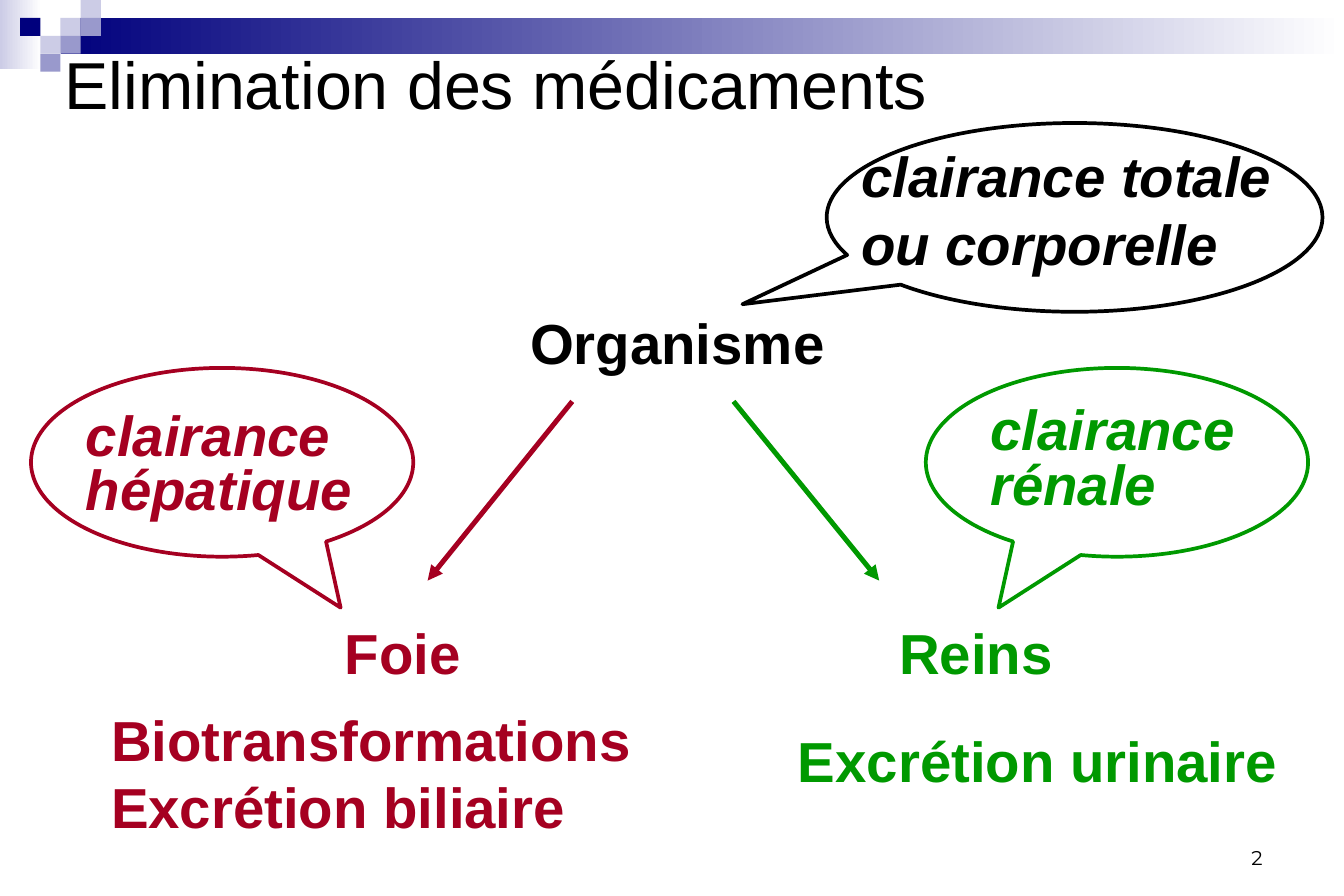
import pptx
import pptx.util
import pptx.dml.color
import pptx.enum.shapes
import pptx.enum.text
import pptx.oxml.ns
import lxml.etree

# Content: places are percent shares of the slide (left, top, width, height)
WIDE, HIGH = 11.25, 7.5
BLACK, RED, GREEN = "000000", "A50021", "009900"
NAVY, MID, PALE, WHITE = "00007D", "9999CC", "CCCCE6", "FFFFFF"

TITLE = ("Elimination des médicaments", (3.82, 4.8, 86.93, 8.93))
BANDS = [((0, 0, 3.11, 7.73), PALE), ((4.53, 2, 95.47, 4), NAVY)]
TILE = (1.5, 2)  # width and height of one mosaic tile
TILES = [(3, 1, PALE), (4, 0, PALE), (4, 1, MID), (2, 2, PALE),
         (1, 1, NAVY), (3, 2, MID), (2, 3, MID)]  # column, row, colour
LABELS = [  # lines, place, colour, alignment
    (["Organisme"], (33.87, 33.73, 33.07, 8.93), BLACK, "CENTER"),
    (["Foie"], (22.67, 68.4, 14.58, 8.8), RED, "CENTER"),
    (["Biotransformations", "Excrétion biliaire"],
     (7.29, 80.4, 45.42, 11.6), RED, "JUSTIFY"),
    (["Reins"], (64.18, 68.4, 16.89, 8.8), GREEN, "CENTER"),
    (["Excrétion urinaire"], (58.4, 80.4, 39.91, 8.93), GREEN, "JUSTIFY"),
]
ARROWS = [(42.58, 31.82, RED), (54.58, 65.42, GREEN)]  # start x, end x
ARROW_TOP, ARROW_END = 44.8, 64.8
BUBBLES = [  # lines, text place, bubble place, pointer, colour, spacing
    (["clairance", "hépatique"], (5.42, 47.33, 23.11, 9.73),
     (2.31, 41.07, 28.44, 21.07), (0.31, 0.77), RED, 0.8),
    (["clairance", "rénale"], (72.71, 46.67, 22.31, 9.73),
     (68.89, 41.07, 28.44, 21.07), (-0.31, 0.77), GREEN, 0.8),
    (["clairance totale", "ou corporelle"], (63.11, 18.93, 34.58, 8.8),
     (61.51, 13.73, 36.89, 21.07), (-0.67, 0.46), BLACK, None),
]
NUMBER = ("2", (71.64, 91.07, 23.29, 6.67))

KIND = pptx.enum.shapes.MSO_SHAPE
ALIGN = pptx.enum.text.PP_ALIGN
ANCHOR = pptx.enum.text.MSO_ANCHOR

deck = pptx.Presentation()
deck.slide_width = pptx.util.Inches(WIDE)
deck.slide_height = pptx.util.Inches(HIGH)
slide = deck.slides.add_slide(deck.slide_layouts[5])
shapes = slide.shapes


def color(code):
    return pptx.dml.color.RGBColor.from_string(code)


def place(box):
    sides = (WIDE, HIGH, WIDE, HIGH)
    return [pptx.util.Inches(part * side / 100)
            for part, side in zip(box, sides)]


def write(frame, lines, size, code, align, font="Arial", bold=False,
          slant=False, space=None, anchor=ANCHOR.MIDDLE):
    frame.word_wrap = True
    frame.auto_size = pptx.enum.text.MSO_AUTO_SIZE.NONE
    frame.vertical_anchor = anchor
    frame.margin_left = frame.margin_right = pptx.util.Inches(0.11)
    frame.margin_top = frame.margin_bottom = pptx.util.Inches(0.05)
    for index, line in enumerate(lines):
        para = frame.add_paragraph() if index else frame.paragraphs[0]
        para.alignment = align
        if space:
            para.line_spacing = space
        run = para.add_run()
        run.text = line
        run.font.name, run.font.size = font, pptx.util.Pt(size)
        run.font.bold, run.font.italic = bold, slant
        run.font.color.rgb = color(code)


def draw(kind, box):
    shape = shapes.add_shape(kind, *place(box))
    shape.shadow.inherit = False
    return shape


# Header bands and mosaic
for box, code in BANDS:
    band = draw(KIND.RECTANGLE, box)
    band.line.fill.background()
    band.fill.gradient()
    band.fill.gradient_angle = 0
    for stop, shade, spot in zip(band.fill.gradient_stops,
                                 (code, WHITE), (0, 1)):
        stop.color.rgb = color(shade)
        stop.position = spot
for col, row, code in TILES:
    tile = draw(KIND.RECTANGLE, (col * TILE[0], row * TILE[1], *TILE))
    tile.line.fill.background()
    tile.fill.solid()
    tile.fill.fore_color.rgb = color(code)

# Title, moved in front of the header
text, box = TITLE
title = shapes.title
title.left, title.top, title.width, title.height = place(box)
write(title.text_frame, [text], 40, BLACK, ALIGN.LEFT)
tree = title.element.getparent()
tree.append(title.element)

# Labels
for lines, box, code, align in LABELS:
    label = shapes.add_textbox(*place(box))
    write(label.text_frame, lines, 34, code, ALIGN[align], bold=True)

# Arrows from the body to each organ
for start, end, code in ARROWS:
    arrow = shapes.add_connector(
        pptx.enum.shapes.MSO_CONNECTOR.STRAIGHT,
        *place((start, ARROW_TOP, end, ARROW_END)))
    arrow.line.color.rgb = color(code)
    arrow.line.width = pptx.util.Pt(3)
    qn = pptx.oxml.ns.qn
    stroke = arrow.line._get_or_add_ln()
    lxml.etree.SubElement(stroke, qn("a:tailEnd"), type="triangle")
    lxml.etree.SubElement(stroke.getparent(), qn("a:effectLst"))

# Speech bubbles
for lines, box, oval, tip, code, space in BUBBLES:
    words = shapes.add_textbox(*place(box))
    write(words.text_frame, lines, 34, code, ALIGN.JUSTIFY,
          bold=True, slant=True, space=space)
    bubble = draw(KIND.OVAL_CALLOUT, oval)
    bubble.fill.background()
    bubble.line.color.rgb = color(code)
    bubble.line.width = pptx.util.Pt(2.25)
    bubble.adjustments[0], bubble.adjustments[1] = tip

# Slide number
text, box = NUMBER
number = shapes.add_textbox(*place(box))
write(number.text_frame, [text], 12, BLACK, ALIGN.RIGHT,
      font="Montserrat", anchor=ANCHOR.BOTTOM)

deck.save("out.pptx")
